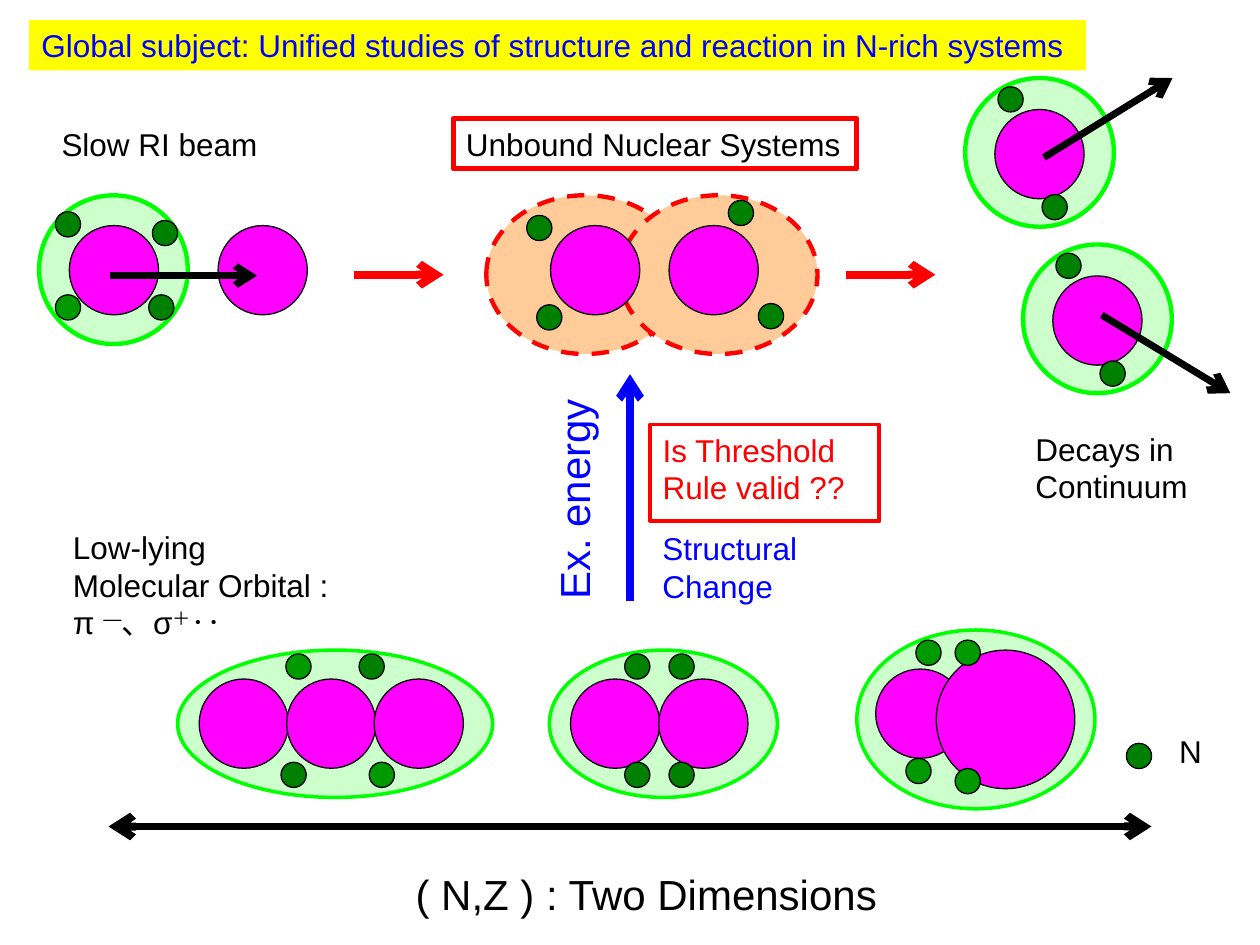
from dataclasses import dataclass

from lxml.etree import SubElement
from pptx import Presentation
from pptx.dml.color import RGBColor as RGB
from pptx.enum.dml import MSO_LINE_DASH_STYLE as Dash
from pptx.enum.shapes import MSO_CONNECTOR as Connector, MSO_SHAPE as Shape
from pptx.enum.text import MSO_ANCHOR as Anchor, PP_ALIGN as Align
from pptx.oxml.ns import qn
from pptx.util import Pt


@dataclass(frozen=True)
class Theme:
    black: str = "000000"
    white: str = "FFFFFF"
    red: str = "FF0000"
    blue: str = "0000FF"
    yellow: str = "FFFF00"
    core: str = "FF00FF"
    neutron: str = "008000"
    light_neutron: str = "009900"
    halo: str = "CCFFCC"
    halo_edge: str = "00FF00"
    unbound: str = "FFCC99"
    font: str = "Arial"
    body: int = 18
    large: int = 24


T = Theme()
CORE, BIG_CORE, NEUTRON, HALO = 51, 79.2, 14.4, 85


def paint(sp, fill=None, edge=None, width=0.75):
    sp.shadow.inherit = False
    if fill:
        sp.fill.solid()
        sp.fill.fore_color.rgb = RGB.from_string(fill)
    else:
        sp.fill.background()
    if edge:
        sp.line.color.rgb = RGB.from_string(edge)
        sp.line.width = Pt(width)
    else:
        sp.line.fill.background()


def ellipse(s, x, y, w, h, fill, edge=T.black, width=0.75):
    sp = s.shapes.add_shape(Shape.OVAL, Pt(x), Pt(y), Pt(w), Pt(h))
    paint(sp, fill, edge, width)
    return sp


def halo(s, x, y, w=HALO, h=HALO, width=2.5):
    ellipse(s, x, y, w, h, T.halo, T.halo_edge, width)


def core(s, x, y, size=CORE):
    ellipse(s, x, y, size, size, T.core)


def neutrons(s, places, fill=T.neutron):
    for x, y in places:
        ellipse(s, x, y, NEUTRON, NEUTRON, fill)


def arrow(s, x1, y1, x2, y2, color=T.black, width=4.5, both=False):
    c = s.shapes.add_connector(Connector.STRAIGHT, Pt(x1), Pt(y1), Pt(x2), Pt(y2))
    c.line.color.rgb = RGB.from_string(color)
    c.line.width = Pt(width)
    ln = c.line._get_or_add_ln()
    for end in ("a:headEnd", "a:tailEnd") if both else ("a:tailEnd",):
        SubElement(ln, qn(end), type="arrow")
    SubElement(c._element.spPr, qn("a:effectLst"))


def write(sp, lines, color, size):
    tf = sp.text_frame
    tf.word_wrap = False
    tf.vertical_anchor = Anchor.TOP
    for i, runs in enumerate(lines):
        p = tf.paragraphs[0] if i == 0 else tf.add_paragraph()
        p.alignment = Align.LEFT
        p.font.name, p.font.size = T.font, Pt(size)
        p.font.color.rgb = RGB.from_string(color)
        for text, raised in [(runs, False)] if isinstance(runs, str) else runs:
            r = p.add_run()
            r.text = text
            if raised:
                r.font._element.set("baseline", "30000")


def label(s, x, y, w, h, lines, color=T.black, size=T.body):
    sp = s.shapes.add_textbox(Pt(x), Pt(y), Pt(w), Pt(h))
    write(sp, lines, color, size)
    return sp


def box(s, x, y, w, h, lines, color=T.black, fill=None, edge=None, width=0.75):
    sp = s.shapes.add_shape(Shape.RECTANGLE, Pt(x), Pt(y), Pt(w), Pt(h))
    paint(sp, fill, edge, width)
    write(sp, lines, color, T.body)


def molecular_states(s):
    top, mid, upper, lower = 371.5, 388, 373.7, 435.6
    halo(s, 101.5, top, 180, 84.2, 2)
    for x in (113.8, 163.8, 213.8):
        core(s, x, mid)
    neutrons(s, [(205.2, upper), (160.6, lower)])
    neutrons(s, [(163.4, upper), (211, lower)], T.light_neutron)

    halo(s, 313.9, top, 130.3, 84.2, 2)
    for x in (326, 376.4):
        core(s, x, mid)
    neutrons(s, [(x, y) for x in (357, 382.3) for y in (upper, lower)])

    halo(s, 489.6, 360, 136.1, 102.2, 2)
    core(s, 500.4, 382.3)
    core(s, 535, top, BIG_CORE)
    neutrons(s, [(523.4, 365.8), (545.8, 365.8), (517.7, 433.4), (545.8, 439.2)],
             T.light_neutron)


def unbound_system(s):
    for x in (277.9, 354.2):
        lobe = ellipse(s, x, 111.6, 113, 90.7, T.unbound, T.red, 2.5)
        lobe.line.dash_style = Dash.DASH
    for x in (314.6, 382.3):
        core(s, x, 128.9)
    neutrons(s, [(301, 123.1), (416.2, 114.5), (306.7, 174.2), (433.4, 173.5)])


def beam_and_target(s):
    core(s, 124.6, 128.9)
    halo(s, 22.3, 111.6)
    core(s, 39.6, 128.9)
    neutrons(s, [(87.1, 126), (31.7, 121), (85, 168.5)])
    neutrons(s, [(31.7, 168.5)], T.light_neutron)
    arrow(s, 62.6, 157.5, 146.9, 157.5, width=4)


def fragment(s, x, y, start, end):
    halo(s, x, y)
    core(s, x + 17, y + 18)
    neutrons(s, [(x + 18.8, y + 5), (x + 44, y + 66.6)])
    arrow(s, x + 45, y + start, x + 118.5, y + end, width=4)


def main():
    prs = Presentation()
    prs.slide_width, prs.slide_height = Pt(720), Pt(540)
    s = prs.slides.add_slide(prs.slide_layouts[6])

    box(s, 16.6, 11.5, 604, 28.8,
        ["Global subject: Unified studies of structure and reaction in N-rich systems"],
        T.blue, T.yellow)

    molecular_states(s)
    unbound_system(s)
    beam_and_target(s)
    fragment(s, 584.6, 139.7, 40.3, 85)
    fragment(s, 551.5, 44.6, 45.4, 0)

    for x in (202.5, 483.5):
        arrow(s, x, 157, x + 51, 157, T.red)
    arrow(s, 62, 472.3, 658, 472.3, both=True)
    arrow(s, 360, 343.4, 360, 213.8, T.blue)

    label(s, 230.4, 492.5, 280.8, 36.7, ["( N,Z ) : Two Dimensions"], size=T.large)
    energy = label(s, 262.8, 266.4, 130.3, 36.7, ["Ex. energy"], T.blue, T.large)
    energy.rotation = 270
    label(s, 371.5, 298.8, 100.8, 55.4, ["Structural", "Change"], T.blue)
    label(s, 34.6, 298.1, 167, 72.7,
          ["Low-lying", "Molecular Orbital :",
           [("π ", False), ("―", True), ("、σ", False), ("＋", True), ("‥", False)]])
    label(s, 28.1, 67.7, 127.4, 28.8, ["Slow RI beam"])
    label(s, 584.6, 241.9, 102.2, 51.1, ["Decays in", "Continuum"])
    box(s, 259.2, 67.7, 230.4, 28.8, ["Unbound Nuclear Systems"],
        T.black, T.white, T.red, 3)
    box(s, 371.5, 242.6, 131, 55.4, ["Is Threshold", "Rule valid ??"],
        T.red, edge=T.red, width=2.25)

    neutrons(s, [(643.7, 424.8)])
    label(s, 666.7, 414.7, 28.8, 31, ["N"])

    prs.save("out.pptx")


if __name__ == "__main__":
    main()
